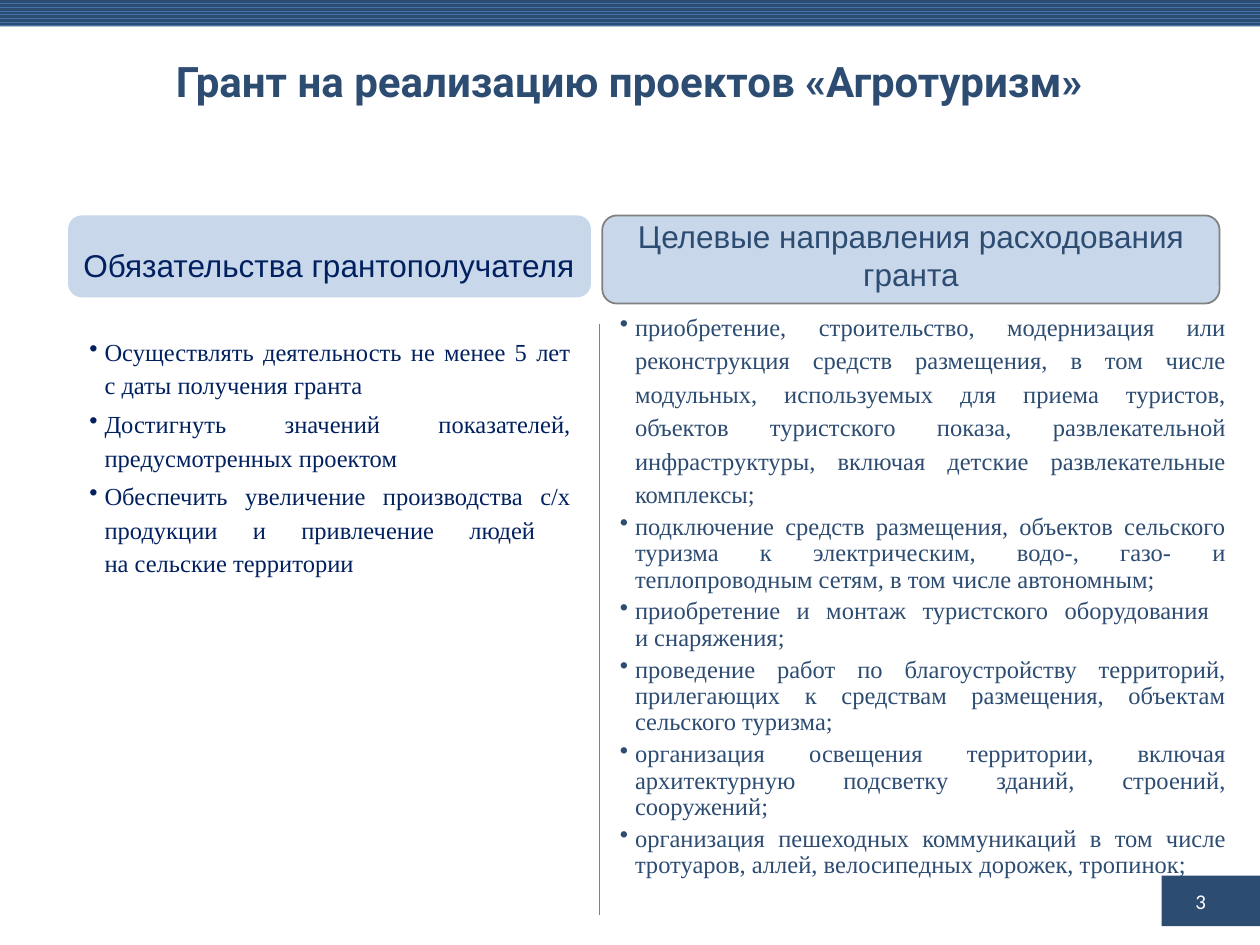
import pptx
import pptx.util
import pptx.dml.color
import pptx.enum.dml
import pptx.enum.shapes
import pptx.enum.text
import pptx.oxml
import pptx.oxml.ns
from pptx.util import Inches, Pt

NAVY, DARK, PALE, GREY, WHITE = "2D4C72", "002060", "C8D7E9", "808080", "FFFFFF"
ALIGN = pptx.enum.text.PP_ALIGN
ANCHOR = pptx.enum.text.MSO_ANCHOR
SHAPE = pptx.enum.shapes.MSO_SHAPE

TITLE = "Грант на реализацию проектов «Агротуризм»"
DUTIES_HEADING = "Обязательства грантополучателя"
SPENDING_HEADING = "Целевые направления расходования гранта"
PAGE_NUMBER = "3"

# Each item: wording, line spacing
DUTIES = [
    ("Осуществлять деятельность не менее 5 лет с даты получения гранта", 1.14),
    ("Достигнуть значений показателей, предусмотренных проектом", 1.14),
    ("Обеспечить увеличение производства с/х продукции и привлечение людей \v"
     "на сельские территории", 1.14),
]
SPENDING = [
    ("приобретение, строительство, модернизация или реконструкция средств размещения, "
     "в том числе модульных, используемых для приема туристов, объектов туристского "
     "показа, развлекательной инфраструктуры, включая детские развлекательные комплексы;",
     1.14),
    ("подключение средств размещения, объектов сельского туризма к электрическим, "
     "водо-, газо- и теплопроводным сетям, в том числе автономным;", 0.9),
    ("приобретение и монтаж туристского оборудования \vи снаряжения;", 0.9),
    ("проведение работ по благоустройству территорий, прилегающих к средствам "
     "размещения, объектам сельского туризма;", 0.9),
    ("организация освещения территории, включая архитектурную подсветку зданий, "
     "строений, сооружений;", 0.9),
    ("организация пешеходных коммуникаций в том числе тротуаров, аллей, "
     "велосипедных дорожек, тропинок;", 0.9),
]


def color(hex_code):
    return pptx.dml.color.RGBColor.from_string(hex_code)


def place(shape, at):
    shape.left, shape.top, shape.width, shape.height = map(Inches, at)


def set_frame(frame, insets, anchor):
    frame.word_wrap = True
    frame.auto_size = pptx.enum.text.MSO_AUTO_SIZE.NONE
    frame.vertical_anchor = anchor
    (frame.margin_left, frame.margin_top,
     frame.margin_right, frame.margin_bottom) = map(Inches, insets)


def style(para, font, size, ink, align, bold=False):
    para.alignment = align
    for span in para.runs:
        span.font.name, span.font.size, span.font.bold = font, Pt(size), bold
        span.font.color.rgb = color(ink)


def add_panel(page, kind, at, fill=None, line=None):
    panel = page.shapes.add_shape(kind, *map(Inches, at))
    panel.shadow.inherit = False
    if fill:
        panel.fill.solid()
        panel.fill.fore_color.rgb = color(fill)
    if line:
        panel.line.color.rgb = color(line)
        panel.line.width = Pt(1)
    else:
        panel.line.fill.background()
    return panel


def add_label(page, text, at, font, size, ink, align, insets=(0.1, 0.05, 0.1, 0.05)):
    box = page.shapes.add_textbox(*map(Inches, at))
    set_frame(box.text_frame, insets, ANCHOR.MIDDLE)
    para = box.text_frame.paragraphs[0]
    para.text = text
    style(para, font, size, ink, align)
    return para


def add_bullets(page, items, at, left_inset, ink):
    box = page.shapes.add_textbox(*map(Inches, at))
    frame = box.text_frame
    set_frame(frame, (left_inset, 0.02, 0.11, 0.02), ANCHOR.TOP)
    for index, (text, spacing) in enumerate(items):
        para = frame.add_paragraph() if index else frame.paragraphs[0]
        para.text = text
        style(para, "Times New Roman", 14, ink, ALIGN.JUSTIFY)
        para.line_spacing = spacing
        para.space_after = Pt(3)
        para.level = 1
        properties = para._p.get_or_add_pPr()
        properties.set("marL", str(Inches(0.12)))
        properties.set("indent", str(-Inches(0.12)))
        bullet = pptx.oxml.parse_xml(
            f'<a:buChar {pptx.oxml.ns.nsdecls("a")} char="•"/>')
        properties.append(bullet)


def main():
    deck = pptx.Presentation()
    deck.slide_width, deck.slide_height = Inches(10), Inches(7.5)
    page = deck.slides.add_slide(deck.slide_layouts.get_by_name("Title Only"))

    band = add_panel(page, SHAPE.RECTANGLE, (0, 0, 10, 0.21))
    band.fill.patterned()
    band.fill.pattern = pptx.enum.dml.MSO_PATTERN.ZIG_ZAG
    band.fill.fore_color.rgb = color("4472AC")
    band.fill.back_color.rgb = color(NAVY)

    title = page.shapes.title
    place(title, (0.09, 0.44, 9.81, 0.4))
    title.text_frame.text = TITLE
    set_frame(title.text_frame, (0, 0, 0, 0), ANCHOR.TOP)
    style(title.text_frame.paragraphs[0], "Roboto", 24, NAVY, ALIGN.CENTER, bold=True)

    add_panel(page, SHAPE.RECTANGLE, (9.22, 6.95, 0.78, 0.4), NAVY)
    add_label(page, PAGE_NUMBER, (7.42, 6.95, 2.25, 0.4), "Calibri", 12, WHITE, ALIGN.RIGHT)

    divider = page.shapes.add_connector(
        pptx.enum.shapes.MSO_CONNECTOR.STRAIGHT,
        Inches(4.76), Inches(2.57), Inches(4.76), Inches(7.26))
    divider.line.color.rgb = color(GREY)
    divider.line.width = Pt(0.5)
    divider._element.spPr.append(
        pptx.oxml.parse_xml(f'<a:effectLst {pptx.oxml.ns.nsdecls("a")}/>'))

    add_panel(page, SHAPE.ROUNDED_RECTANGLE, (0.54, 1.71, 4.15, 0.65), PALE)
    heading = add_label(page, DUTIES_HEADING, (0.57, 1.74, 4.08, 0.58),
                        "Arial", 18, DARK, ALIGN.CENTER, (0.07,) * 4)
    heading.line_spacing = 1.5
    add_bullets(page, DUTIES, (0.58, 2.62, 4.06, 1.93), 0.13, DARK)

    add_bullets(page, SPENDING, (4.76, 2.42, 5.08, 4.54), 0.16, NAVY)
    panel = add_panel(page, SHAPE.ROUNDED_RECTANGLE, (4.78, 1.71, 4.9, 0.7), PALE, GREY)
    panel.text_frame.text = SPENDING_HEADING
    set_frame(panel.text_frame, (0.1, 0.05, 0.1, 0.05), ANCHOR.BOTTOM)
    style(panel.text_frame.paragraphs[0], "Arial", 18, NAVY, ALIGN.CENTER)

    deck.save("out.pptx")


if __name__ == "__main__":
    main()
